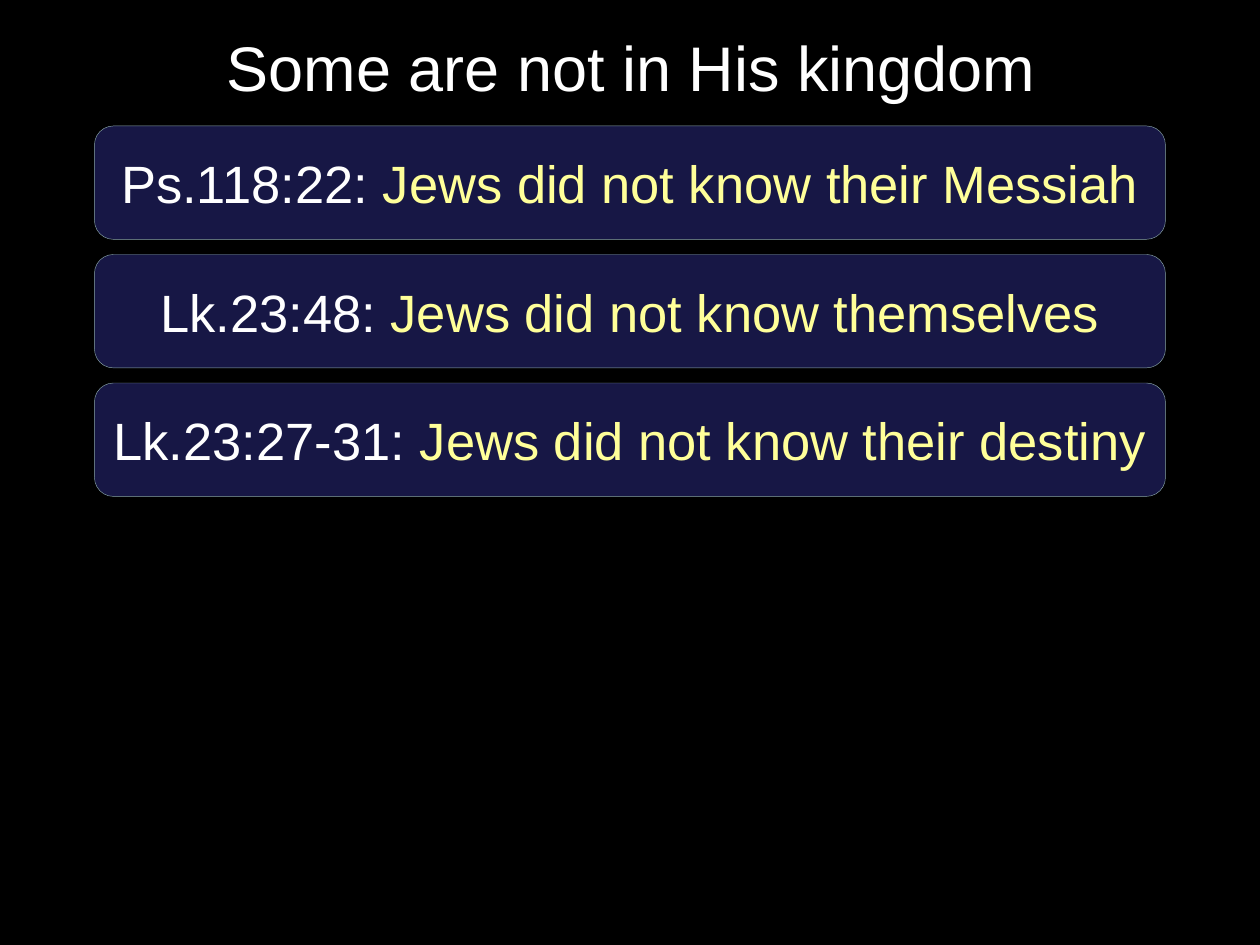
"""Build a slide with a title and three verse bars on black."""
import pptx
import pptx.util
import pptx.dml.color
import pptx.enum.shapes
import pptx.enum.text

RGB = pptx.dml.color.RGBColor
BLACK = RGB(0x00, 0x00, 0x00)
WHITE = RGB(0xFF, 0xFF, 0xFF)
YELLOW = RGB(0xFF, 0xFF, 0x99)
NAVY = RGB(0x17, 0x17, 0x45)
GREY = RGB(0x8A, 0xA6, 0xA8)

TITLE = "Some are not in His kingdom"
VERSES = [
    ("Ps.118:22: ", "Jews did not know their Messiah"),
    ("Lk.23:48: ", "Jews did not know themselves"),
    ("Lk.23:27-31: ", "Jews did not know their destiny"),
]

EMU_PER_PX = 9144
PAGE_WIDTH, PAGE_HEIGHT = 1000, 750
TITLE_PLACE = (15, 8, 972, 90)
BAR_LEFT, BAR_TOP, BAR_WIDTH, BAR_HEIGHT, BAR_GAP = 75, 100, 850, 90, 12
TITLE_SIZE, VERSE_SIZE = 36, 30
FRAME_FORMAT = {
    "word_wrap": True,
    "vertical_anchor": pptx.enum.text.MSO_ANCHOR.MIDDLE,
    "margin_left": 0,
    "margin_right": 0,
}


def px(length):
    """Turn px into EMU."""
    return pptx.util.Emu(length * EMU_PER_PX)


def write_line(shape, spans, size):
    """Write one centred line of coloured spans."""
    frame = shape.text_frame
    for name, value in FRAME_FORMAT.items():
        setattr(frame, name, value)
    para = frame.paragraphs[0]
    para.alignment = pptx.enum.text.PP_ALIGN.CENTER
    for text, color in spans:
        span = para.add_run()
        span.text = text
        for name, value in {"name": "Arial", "size": pptx.util.Pt(size)}.items():
            setattr(span.font, name, value)
        span.font.color.rgb = color


def add_bar(page, index, reference, statement):
    """Add the verse bar at its place in the stack."""
    top = BAR_TOP + index * (BAR_HEIGHT + BAR_GAP)
    bar = page.shapes.add_shape(
        pptx.enum.shapes.MSO_SHAPE.ROUNDED_RECTANGLE,
        *map(px, (BAR_LEFT, top, BAR_WIDTH, BAR_HEIGHT)),
    )
    bar.shadow.inherit = False
    bar.fill.solid()
    bar.fill.fore_color.rgb = NAVY
    bar.line.color.rgb = GREY
    bar.line.width = pptx.util.Pt(0.25)
    write_line(bar, [(reference, WHITE), (statement, YELLOW)], VERSE_SIZE)


def main():
    """Build and save the deck."""
    deck = pptx.Presentation()
    deck.slide_width, deck.slide_height = px(PAGE_WIDTH), px(PAGE_HEIGHT)
    page = deck.slides.add_slide(deck.slide_layouts[5])
    page.background.fill.solid()
    page.background.fill.fore_color.rgb = BLACK

    title = page.shapes.title
    for name, value in zip(("left", "top", "width", "height"), TITLE_PLACE):
        setattr(title, name, px(value))
    write_line(title, [(TITLE, WHITE)], TITLE_SIZE)

    for index, (reference, statement) in enumerate(VERSES):
        add_bar(page, index, reference, statement)
    deck.save("out.pptx")


if __name__ == "__main__":
    main()
